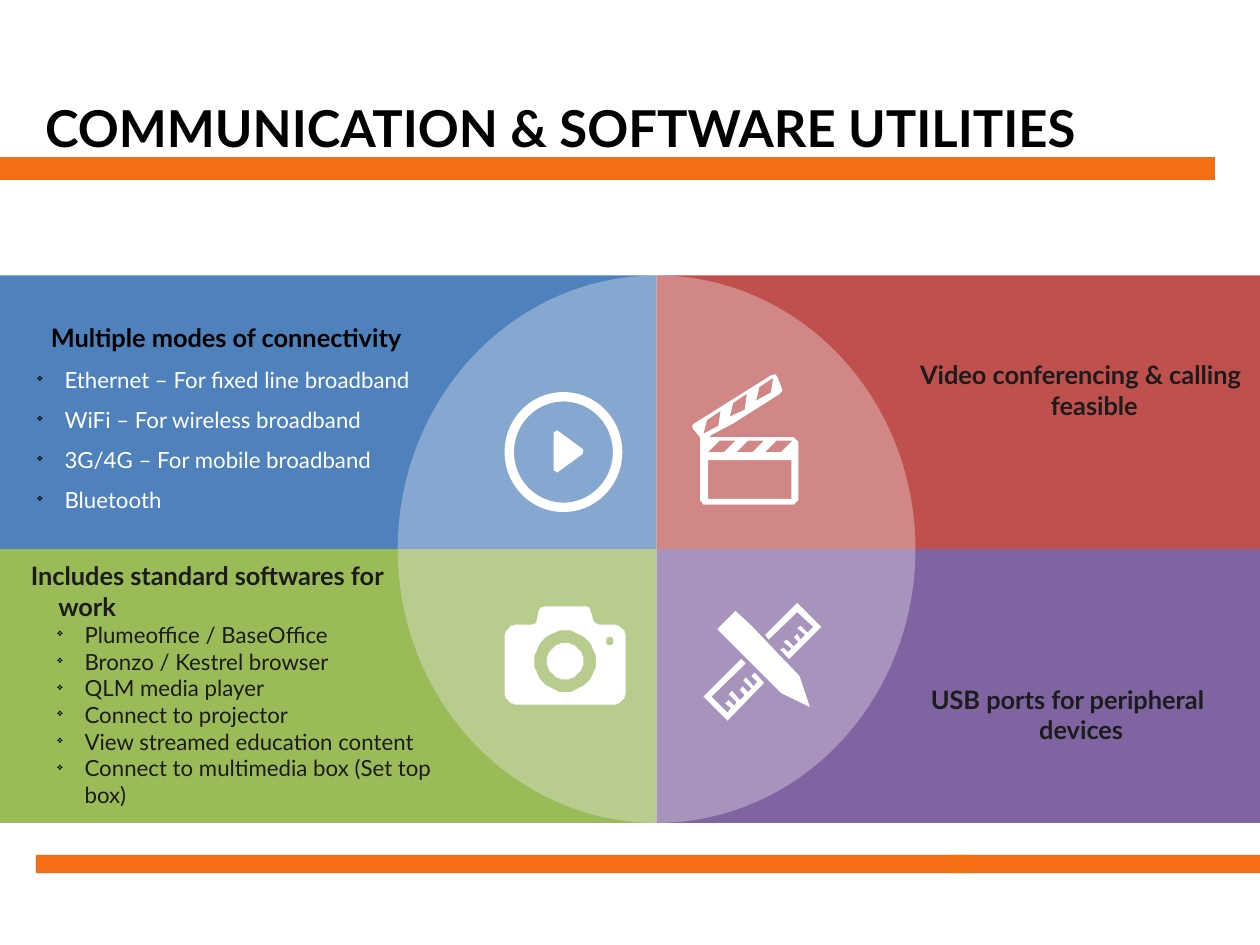
from math import cos, radians, sin

from lxml import etree
from pptx import Presentation
from pptx.dml.color import RGBColor
from pptx.enum.shapes import MSO_SHAPE
from pptx.enum.text import MSO_ANCHOR, PP_ALIGN
from pptx.oxml.ns import qn
from pptx.util import Cm, Inches, Pt

RECTANGLE, OVAL, DONUT = MSO_SHAPE.RECTANGLE, MSO_SHAPE.OVAL, MSO_SHAPE.DONUT
LEFT, CENTER = PP_ALIGN.LEFT, PP_ALIGN.CENTER
MIDDLE, BOTTOM = MSO_ANCHOR.MIDDLE, MSO_ANCHOR.BOTTOM

SLIDE_WIDTH, SLIDE_HEIGHT = Cm(28), Cm(21)
CELL = Inches(0.1)
ICON_CELL = CELL / 10
COLUMNS = SLIDE_WIDTH / CELL
FONT = "Lato"
COLORS = {
    "black": "000000", "ink": "1C1C1C", "white": "FFFFFF", "bar": "F46E15",
    "blue": "4F81BD", "red": "C0504D", "green": "9BBB59", "purple": "8064A2",
    "veil": "F2F2F2",
}


def cells(count):
    return round(count * CELL)


def color(name):
    return RGBColor.from_string(COLORS[name])


def arc(x, y, radius, start=0, end=360, step=10):
    return [(x + radius * cos(radians(a)), y + radius * sin(radians(a)))
            for a in range(start, end + 1, step)]


def write(frame, text, size=16, tint="ink", bold=True, align=LEFT,
          spacing=None, bullet=None, margin=2.4, hanging=2.4):
    first = frame.paragraphs[0]
    paragraph = frame.add_paragraph() if first.runs else first
    paragraph.alignment = align
    if spacing:
        paragraph.line_spacing = spacing
    run = paragraph.add_run()
    run.text = text
    run.font.name, run.font.size, run.font.bold = FONT, Pt(size), bold
    run.font.color.rgb = color(tint)
    layout = paragraph._p.get_or_add_pPr()
    layout.set("marL", str(cells(margin)))
    layout.set("indent", str(-cells(hanging)))
    if bullet:
        paragraph.level = 1
        bullet_color = etree.SubElement(layout, qn("a:buClr"))
        etree.SubElement(bullet_color, qn("a:srgbClr"), val=COLORS["black"])
        etree.SubElement(layout, qn("a:buSzPct"), val="45000")
        etree.SubElement(layout, qn("a:buChar"), char=bullet)


class Board:
    def __init__(self, slide):
        self.shapes = slide.shapes

    def paint(self, shape, tint, alpha=None):
        shape.shadow.inherit = False
        shape.fill.solid()
        shape.fill.fore_color.rgb = color(tint)
        shape.line.fill.background()
        if alpha:
            fill = shape._element.spPr.find(qn("a:solidFill"))
            etree.SubElement(fill[0], qn("a:alpha"), val=str(alpha * 1000))
        return shape

    def block(self, kind, x, y, width, height, tint, alpha=None):
        shape = self.shapes.add_shape(kind, *map(cells, (x, y, width, height)))
        return self.paint(shape, tint, alpha)

    def icon(self, x, y, *contours):
        outline, *holes = contours
        builder = self.shapes.build_freeform(*outline[0], scale=ICON_CELL)
        builder.add_line_segments(outline[1:])
        for hole in holes:
            builder.move_to(*hole[0])
            builder.add_line_segments(hole[1:])
        self.paint(builder.convert_to_shape(cells(x), cells(y)), "white")

    def text_box(self, x, y, width, height, anchor=MIDDLE, insets=(2.7, 1.3)):
        frame = self.shapes.add_textbox(
            *map(cells, (x, y, width, height))).text_frame
        frame.word_wrap = True
        frame.vertical_anchor = anchor
        frame.margin_left = frame.margin_right = cells(insets[0])
        frame.margin_top = frame.margin_bottom = cells(insets[1])
        return frame


def draw_panels(board):
    split_x, top, height = 57.45, 24.1, 23.95
    for row, tints in enumerate((("blue", "red"), ("green", "purple"))):
        y = top + row * height
        board.block(RECTANGLE, 0, y, split_x, height, tints[0])
        board.block(RECTANGLE, split_x, y, COLUMNS - split_x, height, tints[1])
    board.block(OVAL, 34.8, top, 45.3, 2 * height, "veil", 34)


def draw_icons(board):
    play_ring = board.block(DONUT, 44.15, 34.3, 10.3, 10.5, "white")
    play_ring.adjustments[0] = 0.08
    board.icon(44.15, 34.25, [(43, 36), (46, 34), (68, 50), (69, 52),
                              (68, 55), (46, 71), (43, 69), (43, 36)])

    clapper = [(89, 56), (15, 56), (17, 54), (36, 44), (77, 18), (79, 15),
               (78, 12), (75, 4), (73, 1), (69, 2), (2, 44), (0, 46), (1, 49),
               (7, 56), (7, 111), (10, 115), (89, 115), (93, 111), (93, 60),
               (89, 56)]
    window = [(14, 76), (87, 76), (87, 110), (14, 110), (14, 76)]
    arm_stripes = [[(x, y), (x + 12, y - 8), (x + 10, y + 5), (x - 3, y + 12),
                    (x, y)] for x, y in ((59, 12), (36, 26.5), (13, 41))]
    board_stripes = [[(x, 59), (x + 14, 59), (x + 4, 69), (x - 10, 69), (x, 59)]
                     for x in (24, 49, 74)]
    board.icon(60.55, 32.65, clapper, window, *arm_stripes, *board_stripes)

    body = [*arc(11, 27, 11, 180, 270), (24, 16), (27, 15), (28, 13), (30, 3),
            (32, 1), (36, 0), (71, 0), (74, 1), (75, 3), (78, 13), (80, 15),
            (83, 16), *arc(95, 27, 11, 270, 360), *arc(95, 75, 11, 0, 90),
            *arc(11, 75, 11, 90, 180), (0, 27)]
    board.icon(44.15, 53.05, body, arc(53, 48, 27), arc(53, 48, 16),
               arc(92, 30.5, 3.5))

    ruler_top = [(82, 8), (96, 21), (91, 26), (85, 20), (82, 22), (89, 28),
                 (85, 32), (82, 27), (79, 30), (83, 34), (79, 38), (73, 32),
                 (70, 34), (77, 40), (74, 43), (70, 39), (67, 41), (75, 49),
                 (103, 21), (82, 0), (54, 28), (57, 32), (82, 8)]
    ruler_bottom = [(42, 64), (47, 69), (44, 73), (37, 65), (35, 68), (42, 75),
                    (39, 78), (34, 73), (32, 76), (36, 81), (32, 85), (25, 77),
                    (22, 80), (29, 87), (27, 90), (22, 85), (19, 88), (24, 92),
                    (21, 96), (7, 82), (37, 53), (33, 49), (0, 82), (21, 103),
                    (53, 70), (45, 61), (42, 64)]
    pencil = [(42, 20), (28, 7), (12, 23), (26, 37), (68, 79), (93, 91),
              (84, 64), (42, 20)]
    for part in (ruler_top, ruler_bottom, pencil):
        board.icon(61.55, 52.75, part)


def write_texts(board):
    title = board.text_box(3.94, 3.94, 102.36, 9.84, BOTTOM, (0, 0))
    write(title, "COMMUNICATION & SOFTWARE UTILITIES", size=32, tint="black",
          margin=0, hanging=0)

    item = {"size": 14, "bold": False, "bullet": "❖", "margin": 4.7}
    connectivity = board.text_box(-1.75, 25.65, 43.6, 20.4)
    write(connectivity, "Multiple modes of connectivity ", tint="black",
          align=CENTER, spacing=1.5)
    for mode in ("Ethernet – For fixed line broadband",
                 "WiFi – For wireless broadband",
                 "3G/4G – For mobile broadband", "Bluetooth"):
        write(connectivity, mode, tint="white", spacing=1.5, **item)

    software = board.text_box(0, 47.55, 41.4, 24.6)
    write(software, "Includes standard softwares for work")
    for utility in ("Plumeoffice / BaseOffice", "Bronzo / Kestrel browser",
                    "QLM media player", "Connect to projector",
                    "View streamed education content",
                    "Connect to multimedia box (Set top box)"):
        write(software, utility, **item)

    for x, y, feature in ((77.75, 30.05, "Video conferencing & calling feasible"),
                          (76.6, 58.45, "USB ports for peripheral devices")):
        write(board.text_box(x, y, 33.6, 8.1), feature, align=CENTER)


def main():
    deck = Presentation()
    deck.slide_width = SLIDE_WIDTH
    deck.slide_height = SLIDE_HEIGHT
    board = Board(deck.slides.add_slide(deck.slide_layouts[6]))
    for bar in ((0, 13.75, 106.3, 2), (82.7, 74.8, 27.54, 1.6),
                (3.15, 74.8, 82.1, 1.6)):
        board.block(RECTANGLE, *bar, "bar")
    draw_panels(board)
    draw_icons(board)
    write_texts(board)
    deck.save("out.pptx")


if __name__ == "__main__":
    main()
